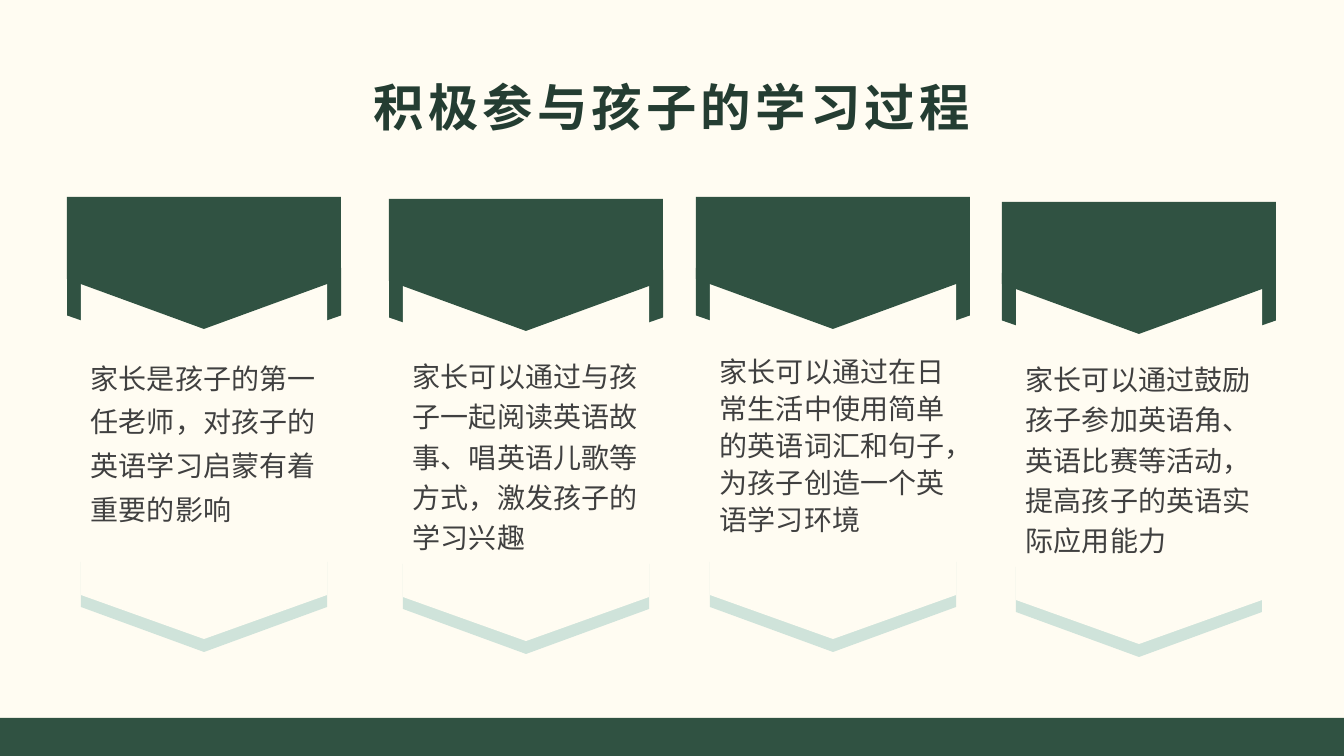
from dataclasses import dataclass

from lxml.etree import SubElement
from pptx import Presentation
from pptx.dml.color import RGBColor
from pptx.enum.shapes import MSO_SHAPE as Preset
from pptx.enum.text import MSO_ANCHOR as Anchor, PP_ALIGN as Align
from pptx.oxml.ns import qn
from pptx.util import Emu, Pt

TITLE = "积极参与孩子的学习过程"
COLUMNS = [
    (67, 197, 1.3, "家长是孩子的第一任老师，对孩子的英语学习启蒙有着重要的影响"),
    (389, 199, 1.2, "家长可以通过与孩子一起阅读英语故事、唱英语儿歌等方式，激发孩子的学习兴趣"),
    (696, 197, 1.1, "家长可以通过在日常生活中使用简单的英语词汇和句子，为孩子创造一个英语学习环境"),
    (1002, 202, 1.2, "家长可以通过鼓励孩子参加英语角、英语比赛等活动，提高孩子的英语实际应用能力"),
]
SLIDE_WIDTH, SLIDE_HEIGHT, BAR_HEIGHT = 1344, 756, 38
TITLE_BOX = (67, 67, 1210, 78)
BANNER_WIDTH, PANEL_INSET = 274, 14
PANEL_WIDTH = BANNER_WIDTH - 2 * PANEL_INSET
TEXT_OFFSET, TEXT_HEIGHT = 149, 222


@dataclass(frozen=True)
class Theme:
    background: str = "FFFCF2"
    green: str = "305242"
    mint: str = "CFE3DA"
    title: str = "243D32"
    body: str = "404040"
    font: str = "Noto Sans CJK SC"
    title_size: int = 36
    body_size: int = 20


theme = Theme()


def px(value):
    return Emu(round(value * 914400 / 100.8))


def paint(shape, color):
    shape.shadow.inherit = False
    shape.fill.solid()
    shape.fill.fore_color.rgb = RGBColor.from_string(color)
    shape.line.fill.background()


def add_run(paragraph, text, size, color, bold=False):
    run = paragraph.add_run()
    run.text = text
    run.font.name = theme.font
    run.font.size = Pt(size)
    run.font.bold = bold
    run.font.color.rgb = RGBColor.from_string(color)
    SubElement(run.font._element, qn("a:ea")).set("typeface", theme.font)
    return run


def add_down_plate(slide, left, top, width, height, color):
    middle_x, middle_y = left + width / 2, top + height / 2
    plate = slide.shapes.add_shape(
        Preset.PENTAGON, px(middle_x - height / 2), px(middle_y - width / 2), px(height), px(width)
    )
    plate.rotation = 90
    paint(plate, color)


def add_pointed_panel(slide, left, top, width, shoulder, tip, color):
    right, middle = left + width, left + width / 2
    corners = [(right, top), (right, shoulder), (middle, tip), (left, shoulder)]
    builder = slide.shapes.build_freeform(px(left), px(top), scale=1.0)
    builder.add_line_segments([(px(x), px(y)) for x, y in corners], close=True)
    paint(builder.convert_to_shape(), color)


def add_column(slide, left, top, spacing, text):
    inner = left + PANEL_INSET
    add_down_plate(slide, left, top + 71, BANNER_WIDTH, 95, theme.green)
    add_down_plate(slide, inner, top + 365, PANEL_WIDTH, 90, theme.mint)
    add_pointed_panel(slide, inner, top + 71, PANEL_WIDTH, top + 398, top + 442, theme.background)
    add_pointed_panel(slide, left, top, BANNER_WIDTH, top + 82, top + 132, theme.green)
    box = slide.shapes.add_textbox(px(inner), px(top + TEXT_OFFSET), px(PANEL_WIDTH), px(TEXT_HEIGHT))
    box.text_frame.word_wrap = True
    paragraph = box.text_frame.paragraphs[0]
    paragraph.line_spacing = spacing
    add_run(paragraph, text, theme.body_size, theme.body)


def add_title(slide):
    title = slide.shapes.title
    title.left, title.top, title.width, title.height = map(px, TITLE_BOX)
    title.text_frame.vertical_anchor = Anchor.MIDDLE
    paragraph = title.text_frame.paragraphs[0]
    paragraph.alignment = Align.CENTER
    run = add_run(paragraph, TITLE, theme.title_size, theme.title, bold=True)
    run.font._element.set("spc", "300")


def main():
    presentation = Presentation()
    presentation.slide_width, presentation.slide_height = px(SLIDE_WIDTH), px(SLIDE_HEIGHT)
    slide = presentation.slides.add_slide(presentation.slide_layouts[5])
    slide.background.fill.solid()
    slide.background.fill.fore_color.rgb = RGBColor.from_string(theme.background)
    bar = slide.shapes.add_shape(
        Preset.RECTANGLE, 0, px(SLIDE_HEIGHT - BAR_HEIGHT), px(SLIDE_WIDTH), px(BAR_HEIGHT)
    )
    paint(bar, theme.green)
    add_title(slide)
    for column in COLUMNS:
        add_column(slide, *column)
    presentation.save("out.pptx")


if __name__ == "__main__":
    main()
